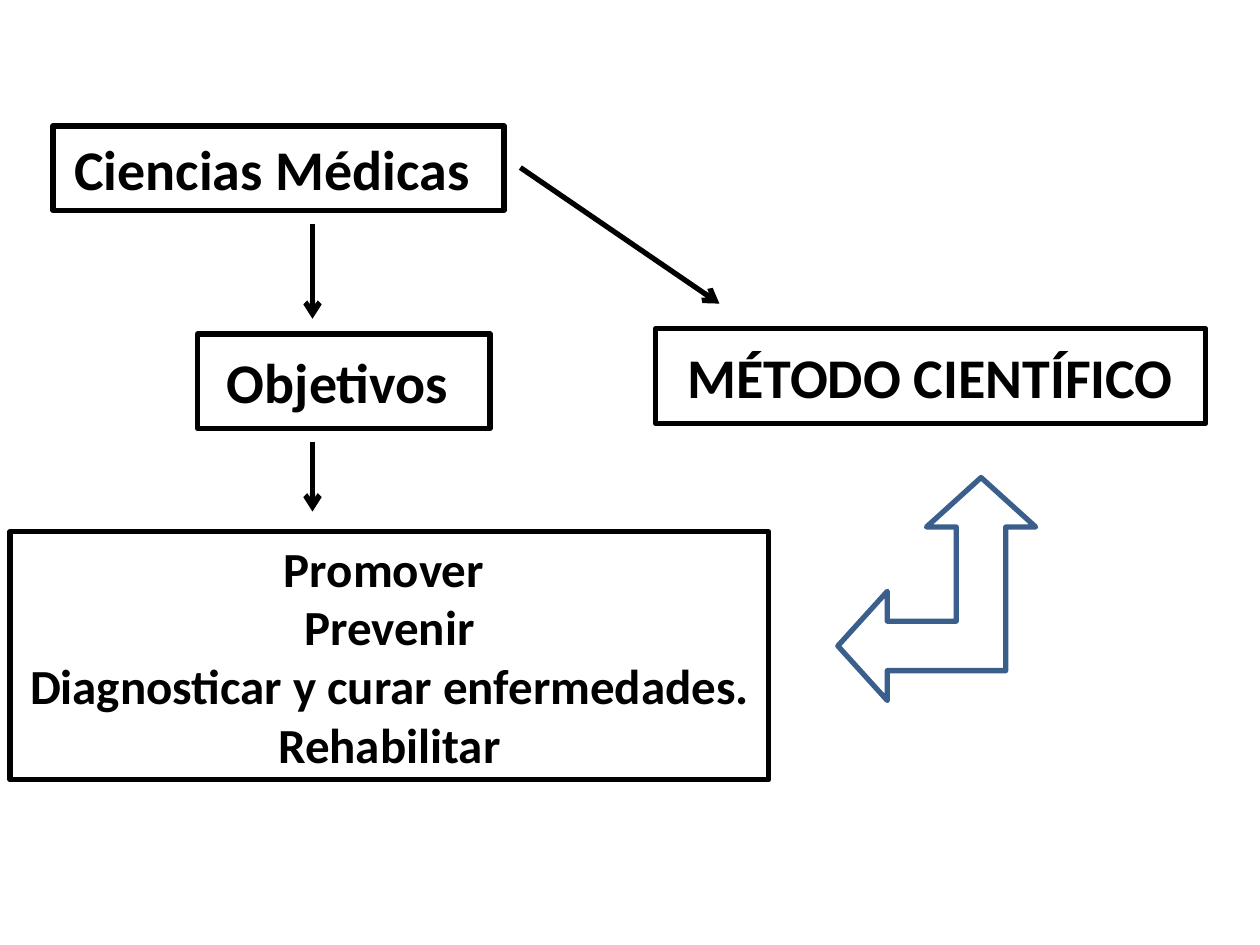
"""Build a concept map of the medical sciences and the scientific method."""
import dataclasses

import lxml.etree
import pptx
import pptx.dml.color
import pptx.enum.shapes
import pptx.enum.text
import pptx.oxml.ns
import pptx.util

Inches = pptx.util.Inches
COLORS = {"ink": "000000", "bent_arrow": "3A5F8C"}
FONT = "Calibri"
LINE_WIDTH = pptx.util.Pt(3)


@dataclasses.dataclass(frozen=True)
class Box:
    left: float
    top: float
    width: float
    height: float
    size: int
    lines: tuple[str, ...]


@dataclasses.dataclass(frozen=True)
class Arrow:
    start: tuple[float, float]
    end: tuple[float, float]


BOXES = (
    Box(0.42, 1, 3.58, 0.67, 32, ("Ciencias Médicas ",)),
    Box(5.2, 2.61, 4.37, 0.75, 32, ("MÉTODO CIENTÍFICO",)),
    Box(1.57, 2.65, 2.32, 0.75, 32, ("Objetivos ",)),
    Box(0.08, 4.22, 6.02, 1.97, 28,
        ("Promover ", "Prevenir", "Diagnosticar y curar enfermedades.", "Rehabilitar")),
)
ARROWS = (
    Arrow((2.48, 1.78), (2.48, 2.53)),
    Arrow((2.48, 3.51), (2.48, 4.06)),
    Arrow((4.13, 1.33), (5.71, 2.41)),
)


def color(name: str) -> pptx.dml.color.RGBColor:
    return pptx.dml.color.RGBColor.from_string(COLORS[name])


def add_outline(slide, preset, left: float, top: float, width: float, height: float,
                line_color: str):
    shape = slide.shapes.add_shape(
        preset, Inches(left), Inches(top), Inches(width), Inches(height))
    shape.shadow.inherit = False
    shape.fill.background()
    shape.line.color.rgb = color(line_color)
    shape.line.width = LINE_WIDTH
    return shape


def add_box(slide, box: Box) -> None:
    shape = add_outline(slide, pptx.enum.shapes.MSO_SHAPE.RECTANGLE,
                        box.left, box.top, box.width, box.height, "ink")
    frame = shape.text_frame
    frame.word_wrap = False
    frame.vertical_anchor = pptx.enum.text.MSO_ANCHOR.MIDDLE
    for index, line in enumerate(box.lines):
        paragraph = frame.add_paragraph() if index else frame.paragraphs[0]
        paragraph.alignment = pptx.enum.text.PP_ALIGN.CENTER
        run = paragraph.add_run()
        run.text = line
        run.font.name = FONT
        run.font.size = pptx.util.Pt(box.size)
        run.font.bold = True
        run.font.color.rgb = color("ink")


def add_arrow(slide, arrow: Arrow) -> None:
    connector = slide.shapes.add_connector(
        pptx.enum.shapes.MSO_CONNECTOR.STRAIGHT,
        *map(Inches, arrow.start + arrow.end))
    connector.line.color.rgb = color("ink")
    connector.line.width = LINE_WIDTH
    qn = pptx.oxml.ns.qn
    properties = connector.element.spPr
    lxml.etree.SubElement(properties.find(qn("a:ln")), qn("a:tailEnd"), type="arrow")
    lxml.etree.SubElement(properties, qn("a:effectLst"))


def add_bent_arrow(slide) -> None:
    shape = add_outline(slide, pptx.enum.shapes.MSO_SHAPE.LEFT_UP_ARROW,
                        6.65, 3.79, 1.57, 1.77, "bent_arrow")
    for index, value in enumerate((0.25, 0.276, 0.25)):
        shape.adjustments[index] = value


def main() -> None:
    presentation = pptx.Presentation()
    presentation.slide_width = Inches(10)
    presentation.slide_height = Inches(7.5)
    slide = presentation.slides.add_slide(presentation.slide_layouts[6])
    for box in BOXES:
        add_box(slide, box)
    for arrow in ARROWS:
        add_arrow(slide, arrow)
    add_bent_arrow(slide)
    presentation.save("out.pptx")


if __name__ == "__main__":
    main()
